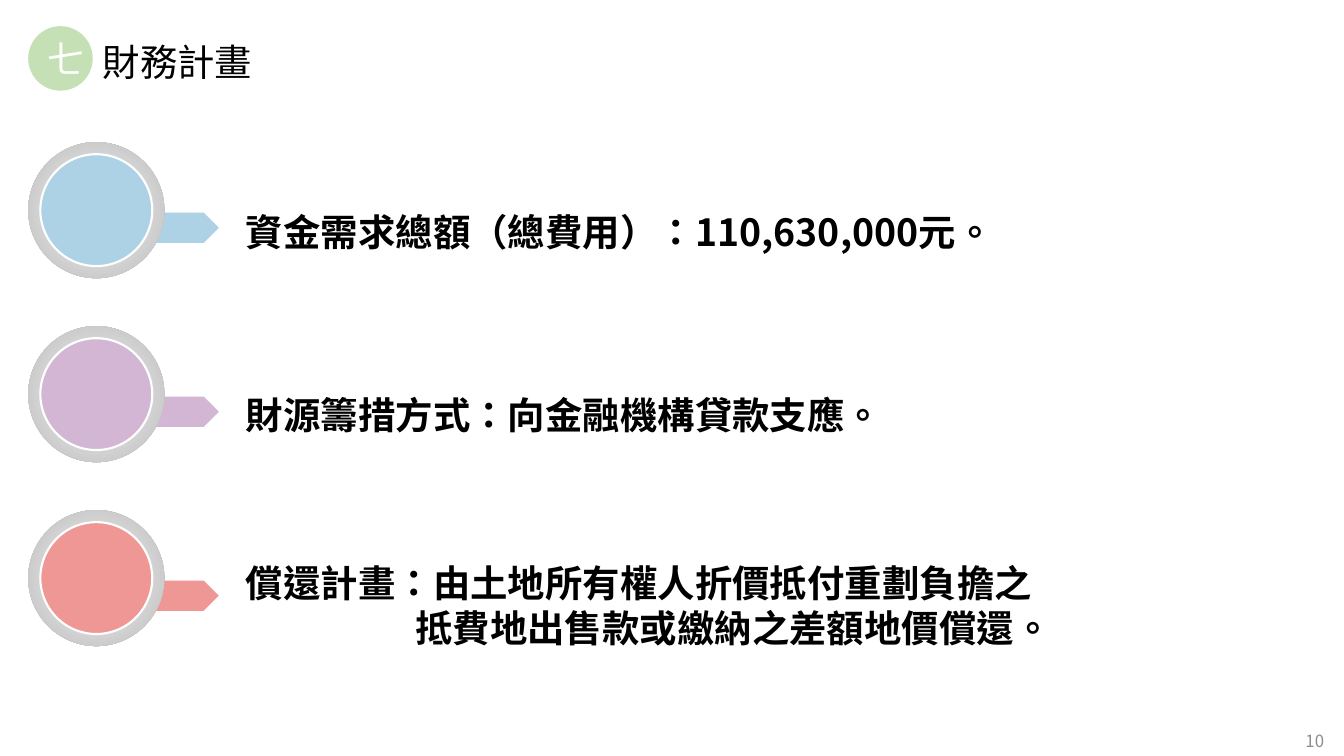
from dataclasses import dataclass

import lxml.etree
import pptx
import pptx.dml.color
import pptx.enum.dml
import pptx.enum.shapes
import pptx.enum.text
import pptx.oxml.ns
import pptx.util

Inches = pptx.util.Inches
Pt = pptx.util.Pt
SHAPE = pptx.enum.shapes.MSO_SHAPE
ANCHOR = pptx.enum.text.MSO_ANCHOR
ALIGN = pptx.enum.text.PP_ALIGN
qn = pptx.oxml.ns.qn


@dataclass(frozen=True)
class Theme:
    font: str = "Noto Sans CJK SC"
    body: float = 26.7
    leading: float = 32
    small: float = 12
    ink: str = "000000"
    white: str = "FFFFFF"
    muted: str = "8C8C8C"
    badge: str = "C5E0B4"
    ring: tuple = ("FAFAFA", "B9B9B9")
    blue: str = "ADD1E5"
    purple: str = "D3B6D4"
    red: str = "EF9795"


THEME = Theme()


def rgb(value):
    return pptx.dml.color.RGBColor.from_string(value)


def write(sp, text, size=THEME.body, color=THEME.ink, bold=False, align=ALIGN.LEFT,
          anchor=ANCHOR.TOP, wrap=True, leading=None, top=0.05, hanging=0):
    """Fill a shape with text; lines after the first are indented by hanging."""
    tf = sp.text_frame
    tf.word_wrap, tf.vertical_anchor = wrap, anchor
    tf.margin_top = Inches(top)
    for i, line in enumerate(text.split("\n")):
        p = tf.paragraphs[0] if i == 0 else tf.add_paragraph()
        p.alignment = align
        if leading:
            p.line_spacing = Pt(leading)
        if i and hanging:
            p._p.get_or_add_pPr().set("marL", str(Inches(hanging)))
        r = p.add_run()
        r.text = line
        r.font.size, r.font.bold = Pt(size), bold
        r.font.name = THEME.font
        r.font.color.rgb = rgb(color)
        rPr = r._r.get_or_add_rPr()
        rPr.set("lang", "zh-TW")
        ea = lxml.etree.Element(qn("a:ea"), typeface=THEME.font)
        rPr.find(qn("a:latin")).addnext(ea)


def add_text(shapes, box, text, **fmt):
    sp = shapes.add_textbox(*map(Inches, box))
    write(sp, text, **fmt)
    return sp


def add_shape(shapes, kind, box, fill=None, line=None):
    sp = shapes.add_shape(kind, *map(Inches, box))
    sp.shadow.inherit = False
    if fill:
        sp.fill.solid()
        sp.fill.fore_color.rgb = rgb(fill)
    if line:
        sp.line.color.rgb = rgb(line)
        sp.line.width = Pt(1.5)
    else:
        sp.line.fill.background()
    return sp


def fill_radial(sp, colors):
    """Gradient that runs from the centre outwards."""
    sp.fill.gradient()
    for stop, color, position in zip(sp.fill.gradient_stops, colors, (0, 1)):
        stop.color.rgb = rgb(color)
        stop.position = position
    grad = sp._element.spPr.find(qn("a:gradFill"))
    lin = grad.find(qn("a:lin"))
    radial = lxml.etree.Element(qn("a:path"), path="circle")
    lxml.etree.SubElement(radial, qn("a:fillToRect"),
                          {side: "50000" for side in "ltrb"})
    grad.replace(lin, radial)


def add_header(slide, box, number, title):
    x, y, w, h = box
    shapes = slide.shapes.add_group_shape().shapes
    badge = add_shape(shapes, SHAPE.OVAL, (x, y, h, h), THEME.badge)
    write(badge, number, color=THEME.white, align=ALIGN.CENTER, anchor=ANCHOR.MIDDLE)
    add_text(shapes, (x + h, y + 0.05, w - h, 0.55), title,
             wrap=False, leading=THEME.leading, top=0.08)


def add_item(slide, box, color, text):
    x, y, w, h = box
    shapes = slide.shapes.add_group_shape().shapes
    # Pointer, ring and disc
    add_shape(shapes, SHAPE.PENTAGON, (x + 1.04, y + 0.7, 0.85, 0.3), color)
    ring = add_shape(shapes, SHAPE.OVAL, (x, y, h, h))
    fill_radial(ring, THEME.ring)
    gap = 0.12
    add_shape(shapes, SHAPE.OVAL, (x + gap, y + gap, h - 2 * gap, h - 2 * gap),
              color, line=THEME.white)
    # Statement
    offset, height = (0.41, 0.93) if "\n" in text else (0.57, 0.59)
    left = 2.06
    add_text(slide.shapes, (x + left, y + offset, w - left, height), text,
             bold=True, leading=THEME.leading, top=0.09, hanging=1.68)


def add_page_number(slide, box, number):
    add_text(slide.shapes, box, number, size=THEME.small, color=THEME.muted,
             anchor=ANCHOR.MIDDLE, wrap=False)


def main():
    prs = pptx.Presentation()
    prs.slide_width, prs.slide_height = Inches(13.33), Inches(7.5)
    slide = prs.slides.add_slide(prs.slide_layouts[6])

    left = 0.28
    add_header(slide, (left, 0.26, 2.34, 0.64), "七", "財務計畫")

    items = [
        (THEME.blue, "資金需求總額（總費用）：110,630,000元。"),
        (THEME.purple, "財源籌措方式：向金融機構貸款支應。"),
        (THEME.red, "償還計畫：由土地所有權人折價抵付重劃負擔之\n"
                    "抵費地出售款或繳納之差額地價償還。"),
    ]
    first, pitch = 1.41, 1.825
    for i, (color, text) in enumerate(items):
        add_item(slide, (left, first + i * pitch, 12.47, 1.35), color, text)

    add_page_number(slide, (12.85, 7.19, 0.4, 0.31), "10")
    prs.save("out.pptx")


if __name__ == "__main__":
    main()
